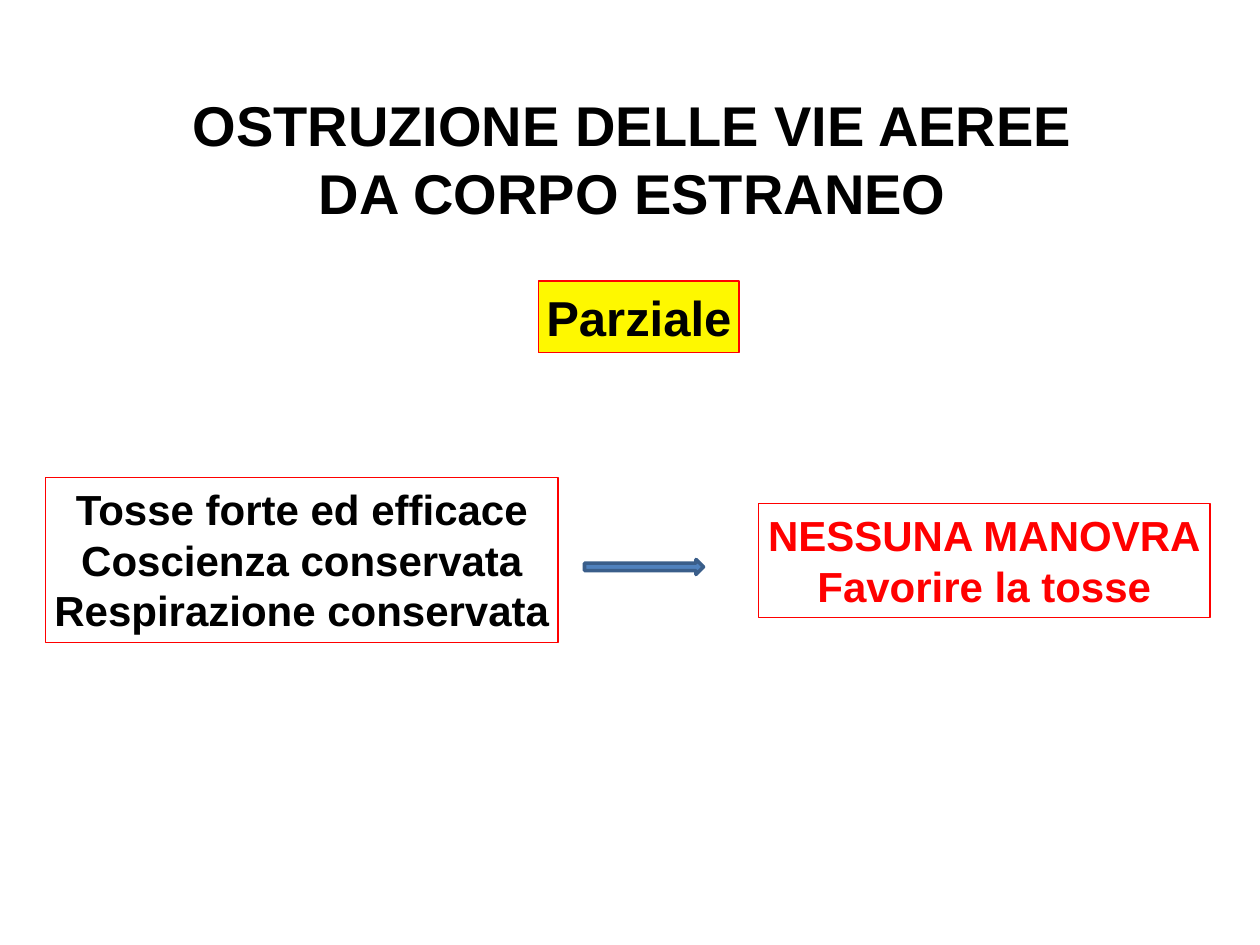
from pptx import Presentation
from pptx.dml.color import RGBColor
from pptx.enum.shapes import MSO_SHAPE as SHAPE
from pptx.enum.text import MSO_ANCHOR as ANCHOR, MSO_AUTO_SIZE as AUTO, PP_ALIGN as ALIGN
from pptx.util import Pt

COLORS = {
    "text": "000000",
    "alert": "FF0000",
    "highlight": "FEF800",
    "arrow": "4F81BD",
    "arrow_line": "3A5E8A",
}
FONT = "Arial"
INSET = 3.6
LEADING = 1.2


def rgb(name):
    return RGBColor.from_string(COLORS[name])


def write(tf, text, size, color, anchor):
    tf.text = text
    tf.auto_size = AUTO.NONE
    tf.vertical_anchor = anchor
    tf.margin_left = tf.margin_right = tf.margin_top = tf.margin_bottom = Pt(INSET)
    for p in tf.paragraphs:
        p.alignment = ALIGN.CENTER
        p.line_spacing = Pt(size * LEADING)
        p.space_before = p.space_after = Pt(0)
        for r in p.runs:
            r.font.name = FONT
            r.font.size = Pt(size)
            r.font.bold = True
            r.font.color.rgb = rgb(color)


def add_title(s, box, text):
    sp = s.shapes.title
    sp.left, sp.top, sp.width, sp.height = map(Pt, box)
    write(sp.text_frame, text, 32, "text", ANCHOR.BOTTOM)
    sp.text_frame.word_wrap = True


def add_shape(s, kind, box, fill, line, weight):
    sp = s.shapes.add_shape(kind, *map(Pt, box))
    sp.shadow.inherit = False
    if fill:
        sp.fill.solid()
        sp.fill.fore_color.rgb = rgb(fill)
    else:
        sp.fill.background()
    sp.line.color.rgb = rgb(line)
    sp.line.width = Pt(weight)
    return sp


def add_label(s, box, lines, size, color="text", fill=None):
    sp = add_shape(s, SHAPE.RECTANGLE, box, fill, "alert", 0.75)
    write(sp.text_frame, "\n".join(lines), size, color, ANCHOR.TOP)
    sp.text_frame.word_wrap = False


def add_arrow(s, box):
    add_shape(s, SHAPE.RIGHT_ARROW, box, "arrow", "arrow_line", 2)


def main():
    prs = Presentation()
    prs.slide_width, prs.slide_height = Pt(720), Pt(540)
    s = prs.slides.add_slide(prs.slide_layouts[5])
    add_title(s, (89.3, 8.6, 544.3, 123.8),
              "OSTRUZIONE DELLE VIE AEREE DA CORPO ESTRANEO")
    add_label(s, (307.8, 160.6, 114.5, 41), ["Parziale"], 28, fill="highlight")
    add_label(s, (26, 273, 293, 94.3),
              ["Tosse forte ed efficace", "Coscienza conservata",
               "Respirazione conservata"], 24)
    add_arrow(s, (334, 319.7, 68, 8.6))
    add_label(s, (433.5, 287.8, 258, 65.2),
              ["NESSUNA MANOVRA", "Favorire la tosse"], 24, color="alert")
    prs.save("out.pptx")


if __name__ == "__main__":
    main()
